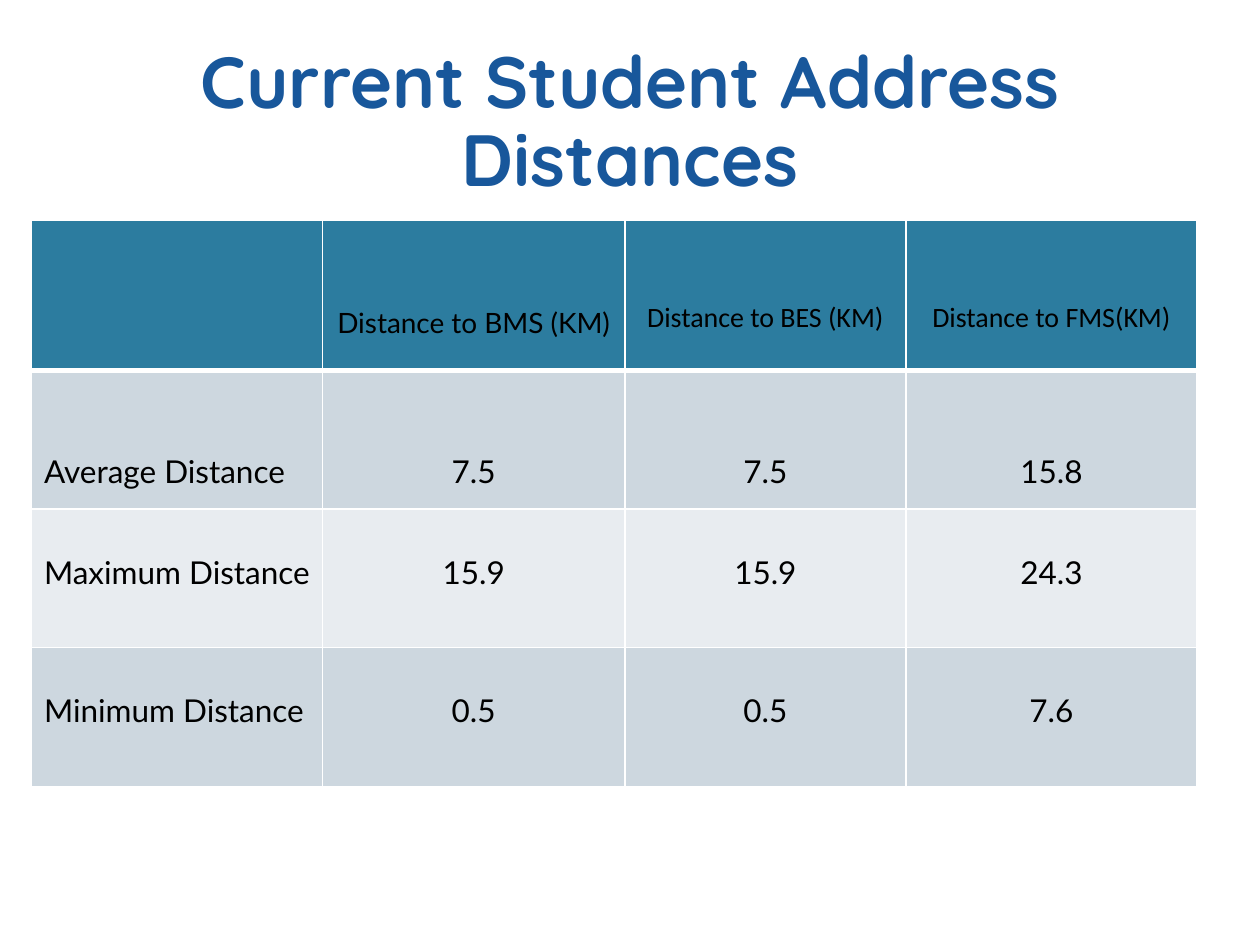
from lxml import etree
from pptx import Presentation
from pptx.dml.color import RGBColor
from pptx.enum import text as t
from pptx.oxml import ns
from pptx.util import Pt

HEAD = ["", "Distance to BMS (KM)", "Distance to BES (KM)", "Distance to FMS(KM)"]
BODY = [
    ["Average Distance", "7.5", "7.5", "15.8"],
    ["Maximum Distance", "15.9", "15.9", "24.3"],
    ["Minimum Distance", "0.5", "0.5", "7.6"],
]
WIDTHS = [166.3, 172.8, 160.6, 166.3]
HEIGHTS = [85.7, 79.2, 79.2, 79.2]
TOPS = [46.8, 25.2, 25.2]
FILLS = ["CDD7DF", "E8ECF0", "CDD7DF"]
LEFT, MID = t.PP_ALIGN.LEFT, t.PP_ALIGN.CENTER


def color(code):
    return RGBColor.from_string(code)


def apply(item, form):
    for name, value in form.items():
        setattr(item, name, value)


def write(frame, words, align, code, **form):
    para = frame.paragraphs[0]
    para.alignment = align
    run = para.add_run()
    run.text = words
    apply(run.font, form)
    run.font.color.rgb = color(code)


def edge(cell, side, width):
    """Draw one white cell border; side is L, R, T or B."""
    props = cell._tc.get_or_add_tcPr()
    line = etree.SubElement(props, ns.qn("a:ln" + side), w=str(Pt(width)))
    fill = etree.SubElement(line, ns.qn("a:solidFill"))
    etree.SubElement(fill, ns.qn("a:srgbClr"), val="FFFFFF")


def paint(cell, code, base=1):
    for side, width in zip("LRTB", (1, 1, 1, base)):
        edge(cell, side, width)
    cell.fill.solid()
    cell.fill.fore_color.rgb = color(code)


def add_title(slide, words):
    title = slide.shapes.title
    apply(title, dict(left=Pt(43.2), top=Pt(8.6), width=Pt(633.6), height=Pt(105.1)))
    frame = title.text_frame
    apply(frame, dict(word_wrap=True, vertical_anchor=t.MSO_ANCHOR.BOTTOM,
                      auto_size=t.MSO_AUTO_SIZE.TEXT_TO_FIT_SHAPE))
    write(frame, words, MID, "18579B", name="Quicksand", size=Pt(41.4), bold=True)


def fill_head(table):
    for col, words in enumerate(HEAD):
        cell = table.cell(0, col)
        paint(cell, "2C7C9F", 3)
        if not words:
            continue
        font, base = ("Lato", 17.5) if col == 1 else ("Calibri", 20.5)
        apply(cell, dict(vertical_anchor=t.MSO_ANCHOR.BOTTOM, margin_left=Pt(0.7),
                         margin_right=Pt(0.7), margin_top=Pt(0.7),
                         margin_bottom=Pt(base)))
        write(cell.text_frame, words, MID, "000000", name=font, size=Pt(16), bold=False)


def fill_body(table):
    for row, (line, top, code) in enumerate(zip(BODY, TOPS, FILLS), 1):
        for col, words in enumerate(line):
            cell = table.cell(row, col)
            paint(cell, code, 1)
            apply(cell, dict(margin_top=Pt(top), margin_left=Pt(7.2),
                             margin_right=Pt(7.2 if col else 3)))
            write(cell.text_frame, words, MID if col else LEFT, "000000",
                  name="Lato", size=Pt(18), bold=False)


def add_grid(slide):
    table = slide.shapes.add_table(len(HEIGHTS), len(WIDTHS), Pt(18), Pt(126),
                                   Pt(sum(WIDTHS)), Pt(sum(HEIGHTS))).table
    for col, width in zip(table.columns, WIDTHS):
        col.width = Pt(width)
    for row, height in zip(table.rows, HEIGHTS):
        row.height = Pt(height)
    fill_head(table)
    fill_body(table)


def main():
    deck = Presentation()
    apply(deck, dict(slide_width=Pt(720), slide_height=Pt(540)))
    slide = deck.slides.add_slide(deck.slide_layouts[5])
    add_title(slide, "Current Student Address Distances")
    add_grid(slide)
    deck.save("out.pptx")


if __name__ == "__main__":
    main()
